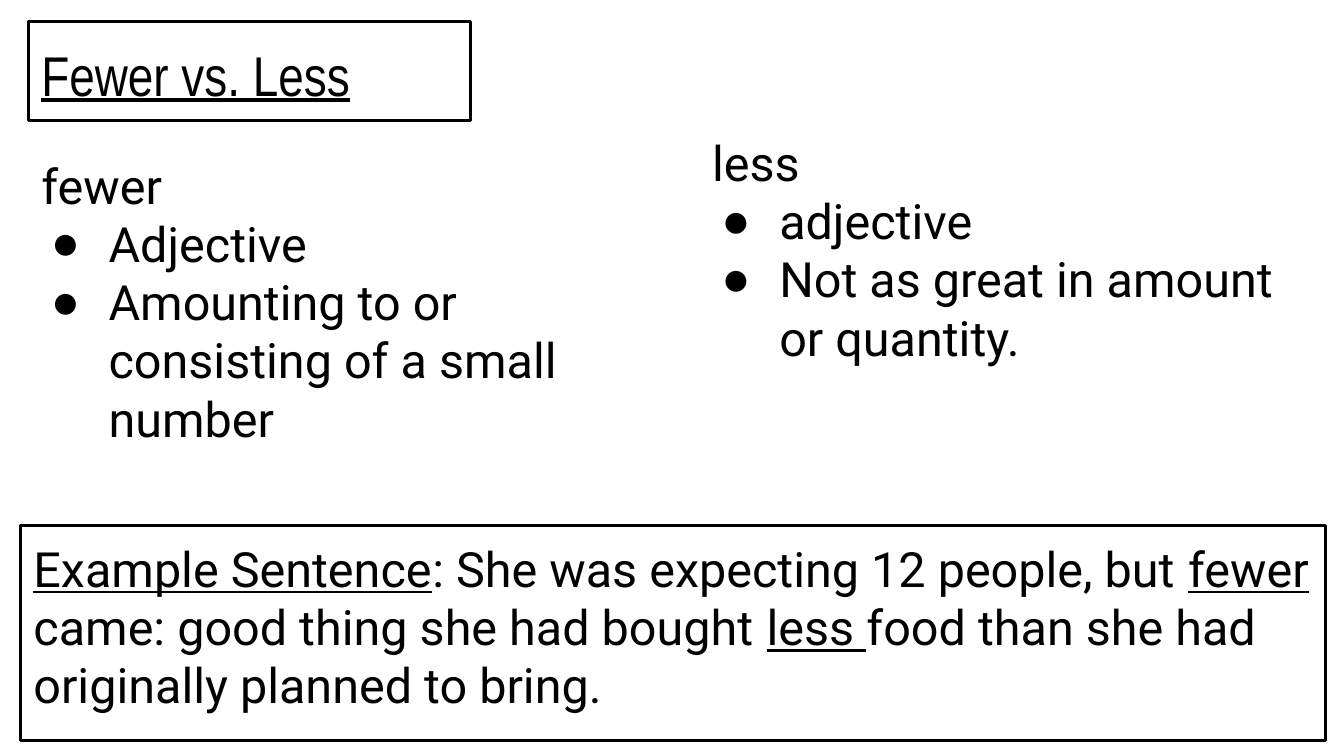
from lxml import etree
from pptx import Presentation
from pptx.dml.color import RGBColor
from pptx.enum.shapes import MSO_SHAPE
from pptx.enum.text import MSO_ANCHOR, PP_ALIGN
from pptx.oxml.ns import qn
from pptx.util import Inches, Pt

RECT = MSO_SHAPE.RECTANGLE
TOP, BOTTOM = MSO_ANCHOR.TOP, MSO_ANCHOR.BOTTOM
LEFT = PP_ALIGN.LEFT

COLORS = {"ink": "000000"}
TITLE_FONT, BODY_FONT, BULLET_FONT = "Arial Narrow", "Roboto", "Arial"


def add_run(p, text, font=BODY_FONT, size=26, color="ink", underline=False):
    r = p.add_run()
    r.text = text
    r.font.name = font
    r.font.size = Pt(size)
    r.font.color.rgb = RGBColor.from_string(COLORS[color])
    r.font.underline = underline


def add_bullet(p, color="ink"):
    pPr = p._p.get_or_add_pPr()
    pPr.set("marL", str(Inches(0.5)))
    pPr.set("indent", str(Inches(-0.43)))
    bu_color = etree.SubElement(pPr, qn("a:buClr"))
    etree.SubElement(bu_color, qn("a:srgbClr"), val=COLORS[color])
    etree.SubElement(pPr, qn("a:buFont"), typeface=BULLET_FONT)
    etree.SubElement(pPr, qn("a:buChar"), char="●")


class SlideBuilder:
    def __init__(self, prs):
        self.s = prs.slides.add_slide(prs.slide_layouts[6])
        self.margin = Inches(0.1)
        self.line_width = Pt(1.5)

    def frame(self, sp, anchor=TOP):
        tf = sp.text_frame
        tf.word_wrap = True
        tf.vertical_anchor = anchor
        tf.margin_left = tf.margin_right = self.margin
        tf.margin_top = tf.margin_bottom = self.margin
        return tf

    def outlined_box(self, x, y, w, h, runs, anchor=TOP, **style):
        """Add a bordered box holding one paragraph of (text, underline) runs."""
        sp = self.s.shapes.add_shape(RECT, Inches(x), Inches(y), Inches(w), Inches(h))
        sp.shadow.inherit = False
        sp.fill.background()
        sp.line.color.rgb = RGBColor.from_string(COLORS["ink"])
        sp.line.width = self.line_width
        p = self.frame(sp, anchor).paragraphs[0]
        p.alignment = LEFT
        for text, underline in runs:
            add_run(p, text, underline=underline, **style)

    def definition(self, x, y, w, h, word, points):
        sp = self.s.shapes.add_textbox(Inches(x), Inches(y), Inches(w), Inches(h))
        tf = self.frame(sp)
        add_run(tf.paragraphs[0], word)
        for point in points:
            p = tf.add_paragraph()
            add_bullet(p)
            add_run(p, point)


def main():
    prs = Presentation()
    prs.slide_width, prs.slide_height = Inches(10), Inches(10 * 9 / 16)
    slide = SlideBuilder(prs)

    slide.outlined_box(0.21, 0.16, 3.29, 0.74, [("Fewer vs. Less", True)],
                       anchor=BOTTOM, font=TITLE_FONT, size=30)
    slide.definition(5.2, 0.89, 4.6, 2.08, "less",
                     ["adjective", "Not as great in amount or quantity."])
    slide.definition(0.21, 1.06, 4.6, 2.44, "fewer",
                     ["Adjective", "Amounting to or consisting of a small number"])
    slide.outlined_box(0.15, 3.91, 9.71, 1.6, [
        ("Example Sentence", True),
        (": She was expecting 12 people, but ", False),
        ("fewer ", True),
        ("came: good thing she had bought ", False),
        ("less ", True),
        ("food than she had originally planned to bring.", False),
    ])

    prs.save("out.pptx")


if __name__ == "__main__":
    main()
